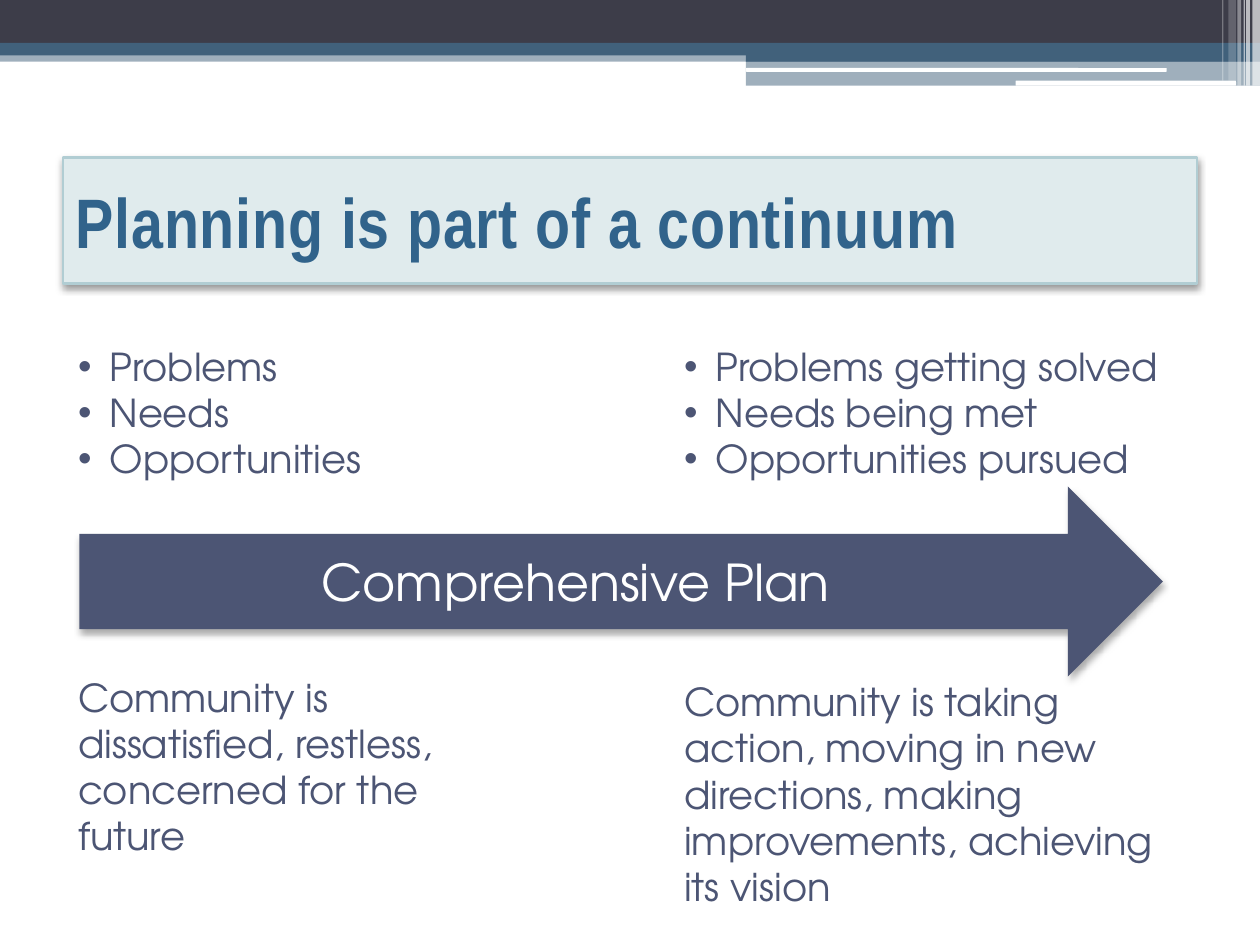
import pptx
import pptx.util
import pptx.dml.color
import pptx.enum.shapes
import pptx.enum.text
import pptx.oxml.ns
import lxml.etree

Inches = pptx.util.Inches
Pt = pptx.util.Pt
RGBColor = pptx.dml.color.RGBColor
KIND = pptx.enum.shapes.MSO_SHAPE
ALIGN = pptx.enum.text.PP_ALIGN
ANCHOR = pptx.enum.text.MSO_ANCHOR
FIT = pptx.enum.text.MSO_AUTO_SIZE
qn = pptx.oxml.ns.qn

DARK = RGBColor(0x3D, 0x3D, 0x49)
STEEL = RGBColor(0x41, 0x61, 0x7B)
WHITE = RGBColor(0xFF, 0xFF, 0xFF)
SLATE = RGBColor(0x4C, 0x55, 0x74)
PALE = RGBColor(0xE0, 0xEB, 0xED)
EDGE = RGBColor(0xB1, 0xCD, 0xD3)
BLUE = RGBColor(0x31, 0x63, 0x8B)
BODY = "TeX Gyre Adventor"
HEAD = "Arial Narrow"


def place(shape, box):
    """Move a shape to a box of left, top, width and height."""
    shape.left, shape.top, shape.width, shape.height = box


def write(para, text, font=BODY, size=22, color=SLATE, bold=False, align=ALIGN.LEFT,
          before=0, bullet=None, track=0):
    """Fill one paragraph with formatted text."""
    para.alignment = align
    para.space_before = Pt(before)
    run = para.add_run()
    run.text = text
    run.font.name, run.font.size, run.font.bold = font, Pt(size), bold
    run.font.color.rgb = color
    if track:
        run.font._element.set("spc", str(track))
    props = para._p.get_or_add_pPr()
    dent = Inches(0.25) if bullet else 0
    props.set("marL", str(dent))
    props.set("indent", str(-dent))
    if bullet:
        face = lxml.etree.SubElement(props, qn("a:buFont"))
        face.set("typeface", "Arial")
        lxml.etree.SubElement(props, qn("a:buChar")).set("char", bullet)
    else:
        lxml.etree.SubElement(props, qn("a:buNone"))


def paint(shape, color, opaque=100):
    """Give a shape a plain fill with no line or shadow."""
    shape.fill.solid()
    shape.fill.fore_color.rgb = color
    shape.line.fill.background()
    shape.shadow.inherit = False
    if opaque < 100:
        tint = shape._element.spPr.find(".//" + qn("a:srgbClr"))
        lxml.etree.SubElement(tint, qn("a:alpha")).set("val", str(opaque * 1000))


def shade(shape, blur, drop, opaque):
    """Add a soft black shadow straight below a shape."""
    effects = shape._element.spPr.find(qn("a:effectLst"))
    outer = lxml.etree.SubElement(effects, qn("a:outerShdw"), blurRad=str(Pt(blur)),
                                  dist=str(Pt(drop)), dir="5400000", rotWithShape="0")
    tint = lxml.etree.SubElement(outer, qn("a:srgbClr"), val="000000")
    lxml.etree.SubElement(tint, qn("a:alpha"), val=str(opaque * 1000))


def add_bands(slide, box):
    """Draw the layered bands and thin stripes along the top."""
    left, top, width, height = box
    half = Inches(5.92)
    rest = width - half
    bands = [
        (0, 0.4, width, 0.09, STEEL, 50, KIND.RECTANGLE),
        (0, 0, width, 0.34, DARK, 100, KIND.RECTANGLE),
        (0, 0.34, width, 0.1, STEEL, 100, KIND.RECTANGLE),
        (half, 0.39, rest, 0.1, STEEL, 100, KIND.RECTANGLE),
        (half, 0.48, rest, 0.2, STEEL, 50, KIND.RECTANGLE),
        (half, 0.54, Inches(3.34), 0.03, WHITE, 100, KIND.ROUNDED_RECTANGLE),
        (Inches(8.06), 0.64, Inches(1.75), 0.04, WHITE, 100, KIND.ROUNDED_RECTANGLE),
    ]
    stripes = [(9.94, 0.06, 0.68, 65), (9.89, 0.03, 0.68, 65), (9.87, 0.01, 0.68, 60),
               (9.82, 0.03, 0.68, 40), (9.75, 0.06, 0.64, 20), (9.7, 0.01, 0.64, 30)]
    bands += [(Inches(x), 0, Inches(w), h, WHITE, opaque, KIND.RECTANGLE)
              for x, w, h, opaque in stripes]
    for x, y, w, h, color, opaque, kind in bands:
        band = slide.shapes.add_shape(kind, left + x, top + Inches(y), w, Inches(h))
        paint(band, color, opaque)


def add_title(slide, box, text):
    """Format the title placeholder as a framed panel."""
    title = slide.shapes.title
    place(title, box)
    paint(title, PALE)
    title.line.color.rgb = EDGE
    title.line.width = Pt(1.5)
    shade(title, 4.1, 2, 40)
    frame = title.text_frame
    frame.auto_size = FIT.NONE
    frame.vertical_anchor = ANCHOR.MIDDLE
    write(frame.paragraphs[0], text, font=HEAD, size=40, color=BLUE, bold=True, track=50)


def add_column(holder, box, points, lines, gap):
    """Fill a body placeholder with bullets above and prose below the arrow."""
    place(holder, box)
    frame = holder.text_frame
    frame.auto_size = FIT.NONE
    frame.vertical_anchor = ANCHOR.TOP
    for i, text in enumerate(points + lines):
        para = frame.paragraphs[0] if i == 0 else frame.add_paragraph()
        write(para, text, bullet="•" if i < len(points) else None,
              before=gap if i == len(points) else 0)


def add_arrow(slide, box, text):
    """Draw the wide arrow and its label."""
    left, top, width, height = box
    arrow = slide.shapes.add_shape(KIND.RIGHT_ARROW, *box)
    paint(arrow, SLATE)
    shade(arrow, 3.5, 2.2, 32)
    label = slide.shapes.add_textbox(left + Inches(1.24), top + Inches(0.46),
                                     Inches(5.4), Inches(0.59))
    label.text_frame.word_wrap = True
    write(label.text_frame.paragraphs[0], text, size=29, color=WHITE, align=ALIGN.CENTER)


def main():
    """Build the slide and save it."""
    deck = pptx.Presentation()
    deck.slide_width, deck.slide_height = Inches(10), Inches(7.5)
    slide = deck.slides.add_slide(deck.slide_layouts[3])
    add_bands(slide, (0, 0, deck.slide_width, Inches(0.68)))
    add_title(slide, (Inches(0.5), Inches(1.25), Inches(9), Inches(1)),
              "Planning is part of a continuum")
    top = Inches(2.67)
    add_column(slide.placeholders[1], (Inches(0.52), top, Inches(3.79), Inches(4.27)),
               ["Problems", "Needs", "Opportunities"],
               ["Community is", "dissatisfied, restless,", "concerned for the future"], 110)
    add_column(slide.placeholders[2], (Inches(5.33), top, Inches(4.13), Inches(4.27)),
               ["Problems getting solved", "Needs being met", "Opportunities pursued"],
               ["Community is taking action, moving in new directions, making "
                "improvements, achieving its vision"], 112.5)
    add_arrow(slide, (Inches(0.63), Inches(3.86), Inches(8.6), Inches(1.51)),
              "Comprehensive Plan")
    deck.save("out.pptx")


if __name__ == "__main__":
    main()
